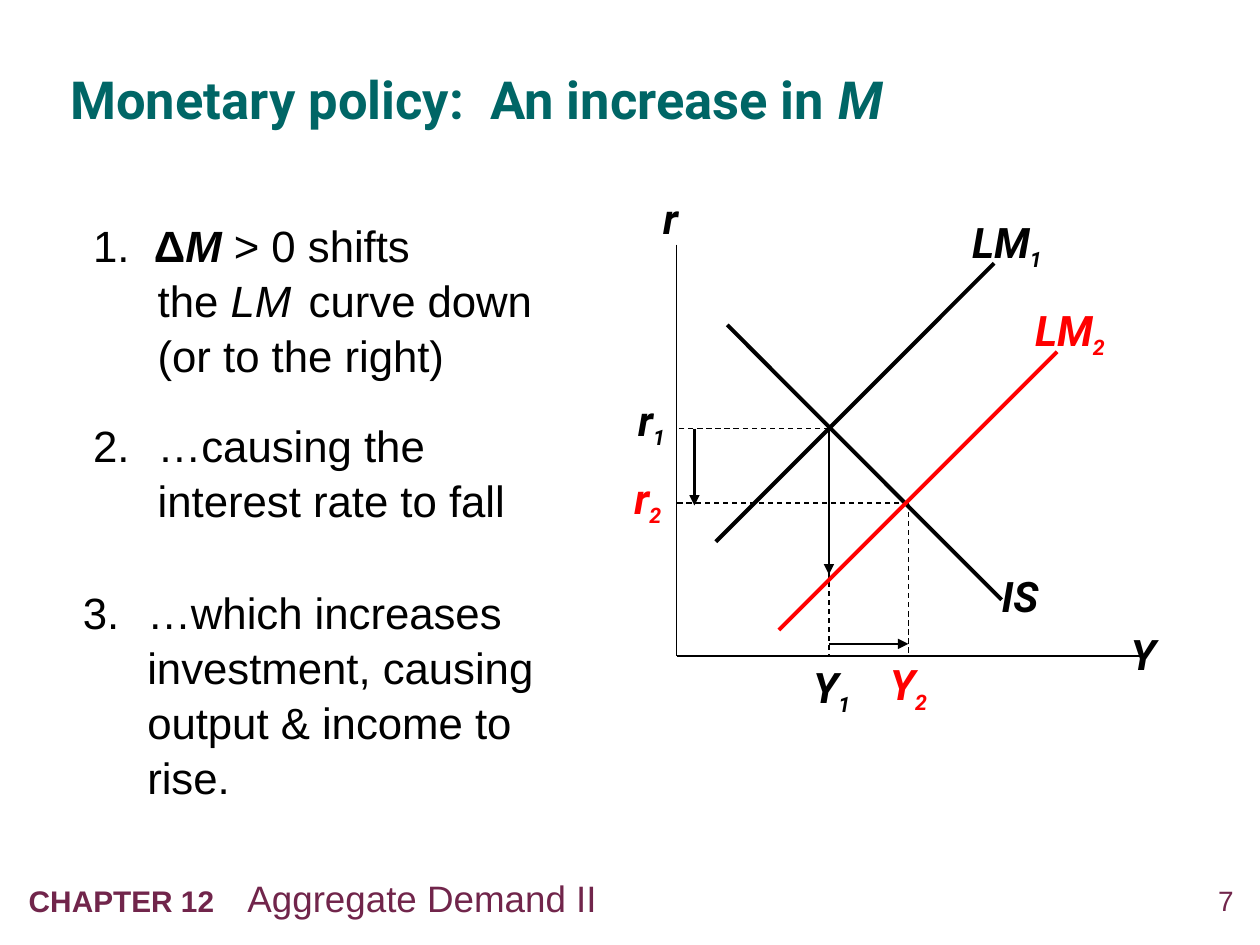
from lxml import etree
from pptx import Presentation
from pptx.dml.color import RGBColor
from pptx.enum.dml import MSO_LINE
from pptx.enum.shapes import MSO_CONNECTOR
from pptx.enum.text import MSO_ANCHOR, PP_ALIGN
from pptx.oxml.ns import qn
from pptx.util import Cm, Pt

STRAIGHT = MSO_CONNECTOR.STRAIGHT
DASH = MSO_LINE.DASH
LEFT, CENTER, RIGHT = PP_ALIGN.LEFT, PP_ALIGN.CENTER, PP_ALIGN.RIGHT
TOP, MIDDLE = MSO_ANCHOR.TOP, MSO_ANCHOR.MIDDLE

BLACK = RGBColor(0x00, 0x00, 0x00)
RED = RGBColor(0xFF, 0x00, 0x00)
TEAL = RGBColor(0x00, 0x66, 0x66)
PLUM = RGBColor(0x71, 0x25, 0x4B)

presentation = Presentation()
presentation.slide_width = Cm(25.4)
presentation.slide_height = Cm(19.05)
slide = presentation.slides.add_slide(presentation.slide_layouts[6])


def add_text(box, runs, font, color, align=LEFT, anchor=TOP, inset=True, spacing=None):
    """Add a one-paragraph box; runs are (text, size, style), style from b, i and s (subscript)."""
    shape = slide.shapes.add_textbox(*(Cm(length) for length in box))
    frame = shape.text_frame
    frame.word_wrap = True
    frame.vertical_anchor = anchor
    if not inset:
        frame.margin_left = frame.margin_top = frame.margin_right = frame.margin_bottom = 0
    paragraph = frame.paragraphs[0]
    paragraph.alignment = align
    paragraph.line_spacing = spacing
    for text, size, style in runs:
        if text == "\n":
            paragraph.add_line_break()
            continue
        run = paragraph.add_run()
        run.text = text
        run.font.name = font
        run.font.size = Pt(size)
        run.font.bold = "b" in style
        run.font.italic = "i" in style
        run.font.color.rgb = color
        if "s" in style:
            run.font._element.set("baseline", "-25000")
    return paragraph


def add_line(start, end, width, color=BLACK, dashed=False, arrow=False):
    points = [Cm(length) for length in (*start, *end)]
    connector = slide.shapes.add_connector(STRAIGHT, *points)
    connector.line.color.rgb = color
    connector.line.width = Pt(width)
    if dashed:
        connector.line.dash_style = DASH
    if arrow:
        line = connector.line._get_or_add_ln()
        etree.SubElement(line, qn("a:tailEnd"), type="triangle")
    etree.SubElement(connector._element.spPr, qn("a:effectLst"))


# Title and footer
add_text((1.42, 0.79, 18.92, 2.34),
         [("Monetary policy:  An increase in ", 30, "b"), ("M", 30, "bi")],
         "Roboto", TEAL, anchor=MIDDLE, inset=False, spacing=1.05)
add_text((0.33, 17.53, 20.78, 1.14),
         [("CHAPTER 12    ", 17, "b"), ("Aggregate Demand II", 21, "")], "Arial", PLUM)
add_text((23.47, 17.81, 1.4, 0.81), [("7", 16, "")], "Arial", PLUM, align=RIGHT, inset=False)

# Numbered steps
steps = [
    ((1.63, 4.24, 9.88, 3.38),
     [("1.  ", 25, ""), ("Δ", 25, "b"), ("M", 25, "bi"), (" > 0 shifts ", 25, ""),
      ("\n", 25, ""), ("the ", 25, ""), ("LM", 25, "i"), (" ", 11, ""),
      (" curve down", 25, ""), ("\n", 25, ""), ("(or to the right)", 25, "")]),
    ((1.63, 8.26, 9.65, 2.74), [("2.\t…causing the interest rate to fall", 25, "")]),
    ((1.42, 11.63, 9.88, 4.45),
     [("3.\t…which increases investment, causing output & income to rise.", 25, "")]),
]
for box, runs in steps:
    paragraph = add_text(box, runs, "Arial", BLACK, spacing=1.05)
    properties = paragraph._p.get_or_add_pPr()
    properties.set("marL", str(Cm(1.3)))
    properties.set("indent", str(Cm(-1.3)))

# Axes and the two equilibria
axis_x, axis_y = 13.64, 13.23
income_1, income_2 = 16.71, 18.31
rate_1, rate_2 = 8.64, 10.14
add_line((axis_x, 4.93), (axis_x, axis_y), 1)
add_line((axis_x, axis_y), (23.04, axis_y), 1)
for income, rate in [(income_1, rate_1), (income_2, rate_2)]:
    add_line((income, rate), (axis_x, rate), 0.75, dashed=True)
    add_line((income, rate), (income, axis_y), 0.75, dashed=True)

# Curves
add_line((14.66, 6.55), (20.19, 12.09), 2.25)
for shift_x, shift_y, color in [(0, 0, BLACK), (1.27, 1.78, RED)]:
    add_line((14.43 + shift_x, 10.92 + shift_y), (20.04 + shift_x, 5.31 + shift_y), 2.25, color)

# Movement arrows
add_line((income_1, 12.98), (income_2, 12.98), 1.5, arrow=True)
add_line((14, rate_1), (14, 10.19), 1.5, arrow=True)
add_line((income_1, rate_1), (income_1, 11.58), 1.5, arrow=True)

# Graph labels: name, subscript, left, top, width, colour, alignment
labels = [
    ("r", "", 12.95, 3.76, 1.14, BLACK, CENTER),
    ("Y ", "", 22.35, 12.55, 1.6, BLACK, CENTER),
    ("IS", "", 19.94, 11.38, 1.9, BLACK, LEFT),
    ("LM", "1", 19.35, 4.24, 2.24, BLACK, LEFT),
    ("LM", "2", 20.62, 6.02, 2.24, RED, LEFT),
    ("r", "1", 12.5, 7.82, 1.27, BLACK, CENTER),
    ("r", "2", 12.4, 9.4, 1.32, RED, CENTER),
    ("Y", "1", 16.03, 13.21, 1.47, BLACK, CENTER),
    ("Y", "2", 17.58, 13.16, 1.47, RED, CENTER),
]
for name, subscript, left, top, width, color, align in labels:
    runs = [(name, 24, "bi")]
    if subscript:
        runs.append((subscript, 21, "bis"))
    add_text((left, top, width, 1.27), runs, "Roboto", color, align=align)

presentation.save("out.pptx")
